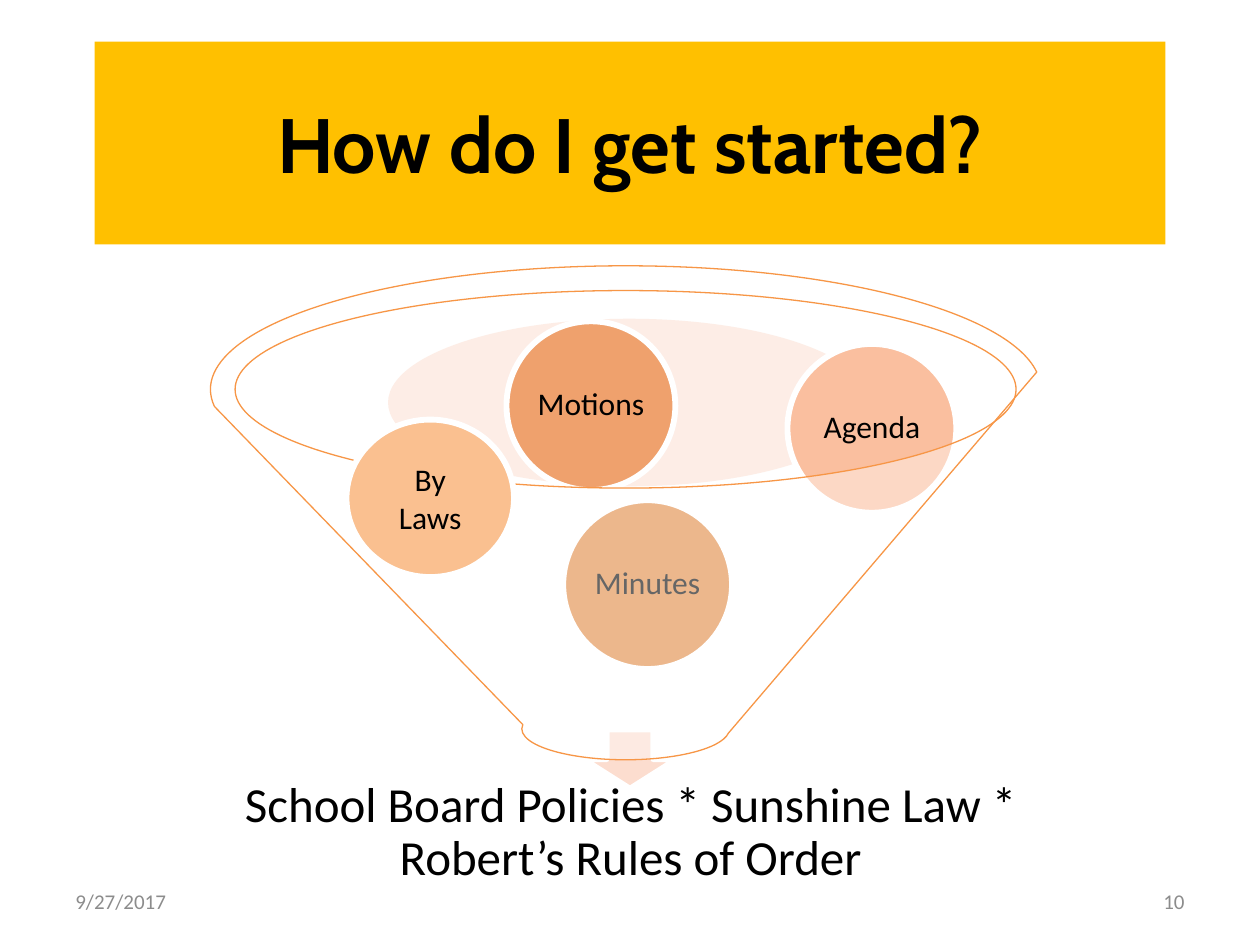
from pptx import Presentation
from pptx.dml.color import RGBColor
from pptx.enum.shapes import MSO_SHAPE
from pptx.enum.text import MSO_ANCHOR, PP_ALIGN
from pptx.oxml.ns import qn
from pptx.util import Inches, Pt
from lxml import etree

OVAL, ARROW, FUNNEL = MSO_SHAPE.OVAL, MSO_SHAPE.DOWN_ARROW, MSO_SHAPE.FUNNEL
LEFT, CENTER, RIGHT = PP_ALIGN.LEFT, PP_ALIGN.CENTER, PP_ALIGN.RIGHT

THEME = {
    "title_font": "Cabin", "font": "Calibri",
    "title_size": 44, "result_size": 28, "ball_size": 18, "footer_size": 12,
    "banner": "FFC000", "text": "000000", "muted": "8C8C8C",
    "white": "FFFFFF", "pool": "FBD3C1", "arrow": "FCDDCF", "funnel": "F79646",
    "thick": 3.35, "thin": 0.75, "alpha": 40,
}

TITLE = ("How do I get started?", (0.75, 0.33, 8.5, 1.61))
RESULT = ("School Board Policies * Sunshine Law * Robert’s Rules of Order",
          (1.67, 5.89, 6.67, 1.45))
FOOTERS = [
    ("9/27/2017", (0.5, 6.95, 2.33, 0.4), LEFT),
    ("10", (7.17, 6.95, 2.33, 0.4), RIGHT),
]
POOL = (3.08, 2.53, 3.83, 1.33)
ARROW_BOX = (4.63, 5.79, 0.74, 0.47)
FUNNEL_BOX = (1.67, 2.11, 6.59, 3.92)
BALLS = [
    ("Minutes", (4.47, 3.97, 1.34, 1.34), "E08840"),
    ("Motions", (4.02, 2.55, 1.34, 1.34), "EFA16D"),
    ("Agenda", (6.25, 2.73, 1.34, 1.34), "FABF9F"),
]
FRONT_BALL = ("By Laws", (2.75, 3.33, 1.33, 1.25), "FAC090")


def rgb(value):
    return RGBColor.from_string(value)


def write(sp, text, size, color=THEME["text"], align=CENTER,
          font=THEME["font"], bold=False, inset=None, spacing=None):
    tf = sp.text_frame
    tf.word_wrap = True
    tf.vertical_anchor = MSO_ANCHOR.MIDDLE
    if inset is not None:
        tf.margin_left = tf.margin_right = Inches(inset)
        tf.margin_top = tf.margin_bottom = Inches(inset)
    tf.text = text
    p = tf.paragraphs[0]
    p.alignment = align
    if spacing:
        p.line_spacing = spacing
    p.font.name, p.font.size, p.font.bold = font, Pt(size), bold
    p.font.color.rgb = rgb(color)


def add_text(s, text, box, size, **style):
    sp = s.shapes.add_textbox(*map(Inches, box))
    write(sp, text, size, **style)


def add_shape(s, kind, box, fill, line=None, width=0, alpha=None):
    sp = s.shapes.add_shape(kind, *map(Inches, box))
    sp.shadow.inherit = False
    sp.fill.solid()
    sp.fill.fore_color.rgb = rgb(fill)
    if alpha:
        color = sp.fill._xPr.find(qn("a:solidFill"))[0]
        etree.SubElement(color, qn("a:alpha")).set("val", str(alpha * 1000))
    if line:
        sp.line.color.rgb = rgb(line)
        sp.line.width = Pt(width)
    else:
        sp.line.fill.background()
    return sp


def add_ball(s, text, box, fill, **style):
    sp = add_shape(s, OVAL, box, fill, THEME["white"], THEME["thick"])
    write(sp, text, THEME["ball_size"], **style)


def main():
    prs = Presentation()
    prs.slide_width, prs.slide_height = Inches(10), Inches(7.5)
    s = prs.slides.add_slide(prs.slide_layouts[5])

    text, box = TITLE
    title = s.shapes.title
    title.left, title.top, title.width, title.height = map(Inches, box)
    title.fill.solid()
    title.fill.fore_color.rgb = rgb(THEME["banner"])
    write(title, text, THEME["title_size"], font=THEME["title_font"], bold=True)

    for text, box, align in FOOTERS:
        add_text(s, text, box, THEME["footer_size"], color=THEME["muted"], align=align)

    add_shape(s, OVAL, POOL, THEME["pool"], alpha=THEME["alpha"])
    add_shape(s, ARROW, ARROW_BOX, THEME["arrow"], THEME["white"], THEME["thick"])
    add_text(s, *RESULT, THEME["result_size"], inset=0.22, spacing=0.9)
    for ball in BALLS:
        add_ball(s, *ball, inset=0.03, spacing=0.9)
    add_shape(s, FUNNEL, FUNNEL_BOX, THEME["white"], THEME["funnel"],
              THEME["thin"], THEME["alpha"])
    add_ball(s, *FRONT_BALL)

    prs.save("out.pptx")


if __name__ == "__main__":
    main()
